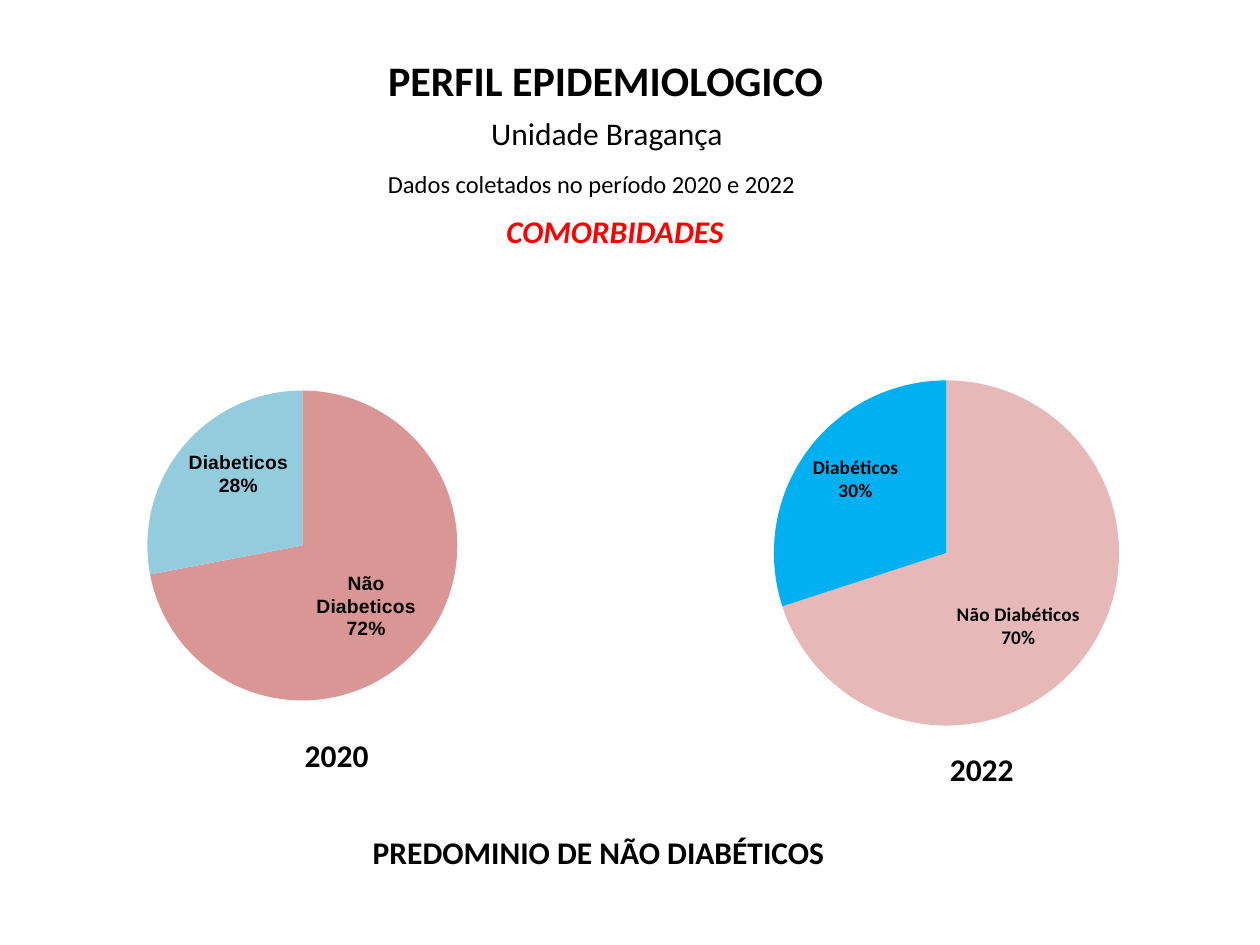
from lxml import etree
from pptx import Presentation
from pptx.chart.data import CategoryChartData
from pptx.dml.color import RGBColor
from pptx.enum.chart import XL_CHART_TYPE, XL_LABEL_POSITION
from pptx.enum.text import MSO_ANCHOR, MSO_AUTO_SIZE, PP_ALIGN
from pptx.oxml.ns import qn
from pptx.util import Inches, Pt

PIE = XL_CHART_TYPE.PIE
INSIDE_END = XL_LABEL_POSITION.INSIDE_END
TOP, LEFT = MSO_ANCHOR.TOP, PP_ALIGN.LEFT
FIT_SHAPE = MSO_AUTO_SIZE.SHAPE_TO_FIT_TEXT
BLACK, RED = "000000", "FF0000"


def rgb(color):
    return RGBColor.from_string(color)


def set_font(font, size, name="Calibri", color=BLACK, bold=False, italic=False):
    font.size = Pt(size)
    font.name = name
    font.bold = bold
    font.italic = italic
    font.color.rgb = rgb(color)


def fill_text(sp, text, box, size=18, **style):
    sp.left, sp.top, sp.width, sp.height = map(Inches, box)
    tf = sp.text_frame
    tf.text = text
    tf.word_wrap = False
    tf.auto_size = FIT_SHAPE
    tf.vertical_anchor = TOP
    p = tf.paragraphs[0]
    p.alignment = LEFT
    set_font(p.runs[0].font, size, **style)


def add_text(s, text, box, size=18, **style):
    sp = s.shapes.add_textbox(0, 0, 0, 0)
    fill_text(sp, text, box, size, **style)


def set_plot_layout(chart, fractions):
    """Place the inner plot area by x, y, width and height fractions."""
    plot_area = chart.plots[0]._element.getparent()
    for old in plot_area.findall(qn("c:layout")):
        plot_area.remove(old)
    layout = etree.Element(qn("c:layout"))
    manual = etree.SubElement(layout, qn("c:manualLayout"))
    values = [("layoutTarget", "inner"), ("xMode", "edge"), ("yMode", "edge")]
    values += zip("xywh", map(str, fractions))
    for tag, value in values:
        etree.SubElement(manual, qn(f"c:{tag}")).set("val", value)
    plot_area.insert(0, layout)


def add_pie(s, box, plot, slices, label_font):
    """Draw a pie from (category, percentage, colour) slices."""
    data = CategoryChartData()
    data.categories = [name for name, _, _ in slices]
    data.add_series("Series 1", [value for _, value, _ in slices])
    chart = s.shapes.add_chart(PIE, *map(Inches, box), data).chart
    chart.has_title = False
    chart.has_legend = False
    set_font(chart.font, 10)
    set_plot_layout(chart, plot)

    series = chart.plots[0].series[0]
    for i, (_, _, color) in enumerate(slices):
        fill = series.points[i].format.fill
        fill.solid()
        fill.fore_color.rgb = rgb(color)

    labels = series.data_labels
    labels.show_category_name = True
    labels.show_percentage = True
    labels.show_value = False
    labels.number_format = "0%"
    labels.number_format_is_linked = False
    labels.position = INSIDE_END
    set_font(labels.font, 11, label_font, bold=True)
    separator = etree.Element(qn("c:separator"))
    separator.text = "\n"
    labels._element.find(qn("c:showBubbleSize")).addnext(separator)


def main():
    prs = Presentation()
    prs.slide_width, prs.slide_height = Inches(10), Inches(7.5)
    s = prs.slides.add_slide(prs.slide_layouts[5])

    fill_text(s.shapes.title, "PERFIL EPIDEMIOLOGICO",
              (2.98, 0.38, 3.69, 0.5), 24, bold=True)
    add_text(s, "Unidade Bragança", (3.8, 0.86, 2.06, 0.4))
    add_text(s, "Dados coletados no período 2020 e 2022",
             (2.98, 1.29, 3.51, 0.34), 14)
    add_text(s, "COMORBIDADES", (3.92, 1.63, 1.96, 0.4),
             color=RED, bold=True, italic=True)

    add_pie(s, (0, 2.77, 5, 3), (0.05, 0.11, 0.86, 0.82),
            [("Não Diabeticos", 72, "D99694"), ("Diabeticos", 28, "93CDDD")],
            "Arial")
    add_pie(s, (4.74, 2.61, 5.28, 3.15), (0.07, 0.13, 0.91, 0.87),
            [("Não Diabéticos", 70, "E6B9B8"), ("Diabéticos", 30, "00B0F0")],
            "Calibri")

    add_text(s, "2020", (2.32, 5.79, 0.71, 0.4), bold=True)
    add_text(s, "2022", (7.44, 5.9, 0.71, 0.4), bold=True)
    add_text(s, "PREDOMINIO DE NÃO DIABÉTICOS",
             (2.86, 6.56, 3.82, 0.4), bold=True)
    prs.save("out.pptx")


if __name__ == "__main__":
    main()
